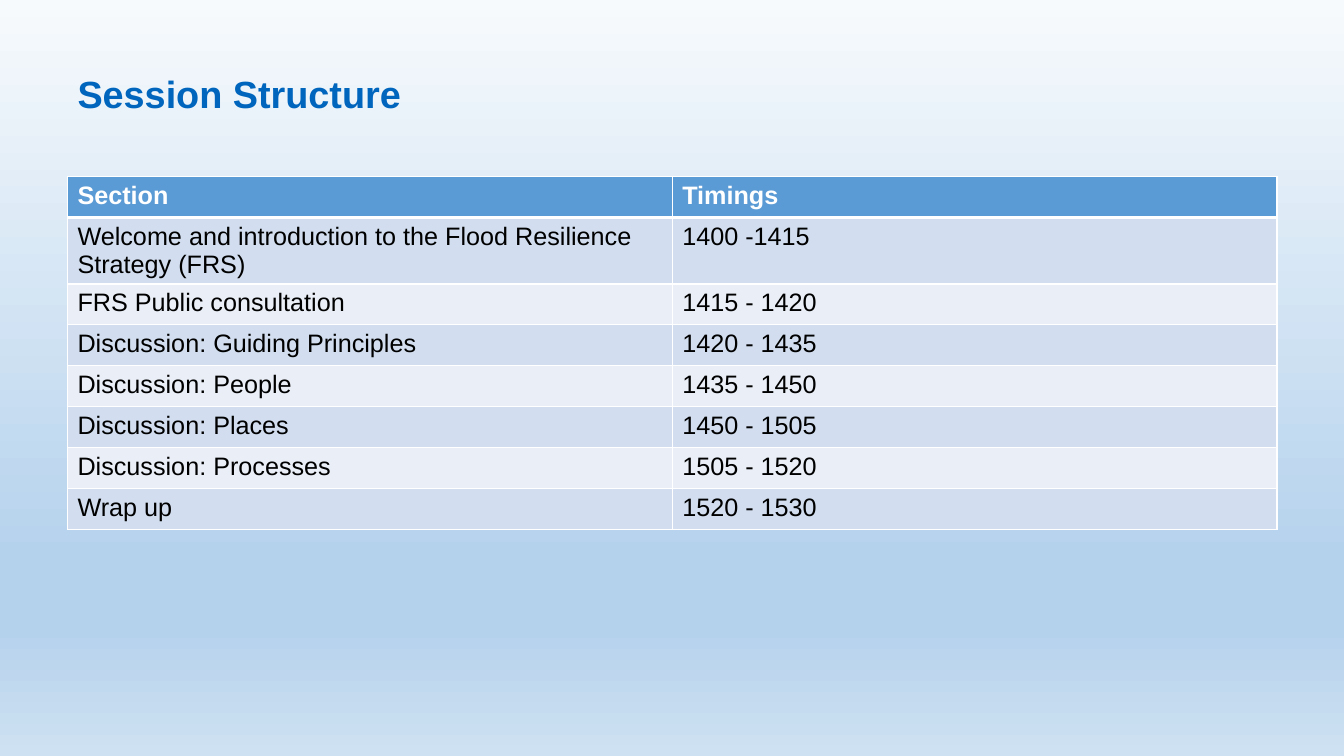
from lxml.etree import SubElement
from pptx import Presentation
from pptx.dml.color import RGBColor
from pptx.enum.text import MSO_ANCHOR, PP_ALIGN
from pptx.oxml.ns import qn
from pptx.util import Cm, Pt

HUES = {"title": "0065BD", "head": "5B9BD5", "odd": "D2DEEF", "even": "EAEFF7",
        "white": "FFFFFF", "black": "000000",
        "top": "F7FAFD", "mid": "B5D2EC", "base": "CEE1F2"}
STOPS = [(0, "top"), (74, "mid"), (83, "mid"), (100, "base")]
ROWS = [
    ("Section", "Timings"),
    ("Welcome and introduction to the Flood Resilience Strategy (FRS)", "1400 -1415"),
    ("FRS Public consultation", "1415 - 1420"),
    ("Discussion: Guiding Principles", "1420 - 1435"),
    ("Discussion: People", "1435 - 1450"),
    ("Discussion: Places", "1450 - 1505"),
    ("Discussion: Processes", "1505 - 1520"),
    ("Wrap up", "1520 - 1530"),
]


def color(name):
    """Return the named colour."""
    return RGBColor.from_string(HUES[name])


def style(text, size, hue, bold):
    """Format every run of a paragraph."""
    for run in text.runs:
        font = run.font
        font.name, font.size, font.bold = "Arial", Pt(size), bold
        font.color.rgb = color(hue)


def paint(slide):
    """Fill the background with a vertical gradient."""
    fill = slide.background.fill
    fill.gradient()
    fill.gradient_angle = 270
    stops = slide.element.find(".//" + qn("a:gsLst"))
    for old in list(stops):
        stops.remove(old)
    for place, hue in STOPS:
        stop = SubElement(stops, qn("a:gs"), pos=str(place * 1000))
        SubElement(stop, qn("a:srgbClr"), val=HUES[hue])


def edge(cell, side, width):
    """Draw one white border of a cell."""
    line = SubElement(cell._tc.get_or_add_tcPr(), qn("a:ln" + side), w=str(Pt(width)))
    fill = SubElement(line, qn("a:solidFill"))
    SubElement(fill, qn("a:srgbClr"), val=HUES["white"])


def head(slide, left, top, width, height):
    """Place the slide title in its box."""
    title = slide.shapes.title
    title.left, title.top, title.width, title.height = left, top, width, height
    frame = title.text_frame
    frame.text = "Session Structure"
    frame.vertical_anchor = MSO_ANCHOR.MIDDLE
    frame.paragraphs[0].alignment = PP_ALIGN.LEFT
    style(frame.paragraphs[0], 27, "title", True)


def agenda(slide, left, top, width, height):
    """Place the table of sections and timings in its box."""
    table = slide.shapes.add_table(len(ROWS), 2, left, top, width, height).table
    for r, row in enumerate(ROWS):
        first = r == 0
        back = "head" if first else "odd" if r % 2 else "even"
        for c, words in enumerate(row):
            cell = table.cell(r, c)
            cell.text_frame.text = words
            style(cell.text_frame.paragraphs[0], 18, "white" if first else "black", first)
            for side in "LRTB":
                thick = (r, side) in ((0, "B"), (1, "T"))
                edge(cell, side, 3 if thick else 1)
            cell.fill.solid()
            cell.fill.fore_color.rgb = color(back)


def main():
    """Build and save the slide."""
    deck = Presentation()
    deck.slide_width, deck.slide_height = Cm(33.87), Cm(19.05)
    slide = deck.slides.add_slide(deck.slide_layouts[5])
    paint(slide)
    left, width = Cm(1.7), Cm(30.48)
    head(slide, left, Cm(0.76), width, Cm(3.18))
    agenda(slide, left, Cm(4.45), width, Cm(8.24))
    deck.save("out.pptx")


if __name__ == "__main__":
    main()
